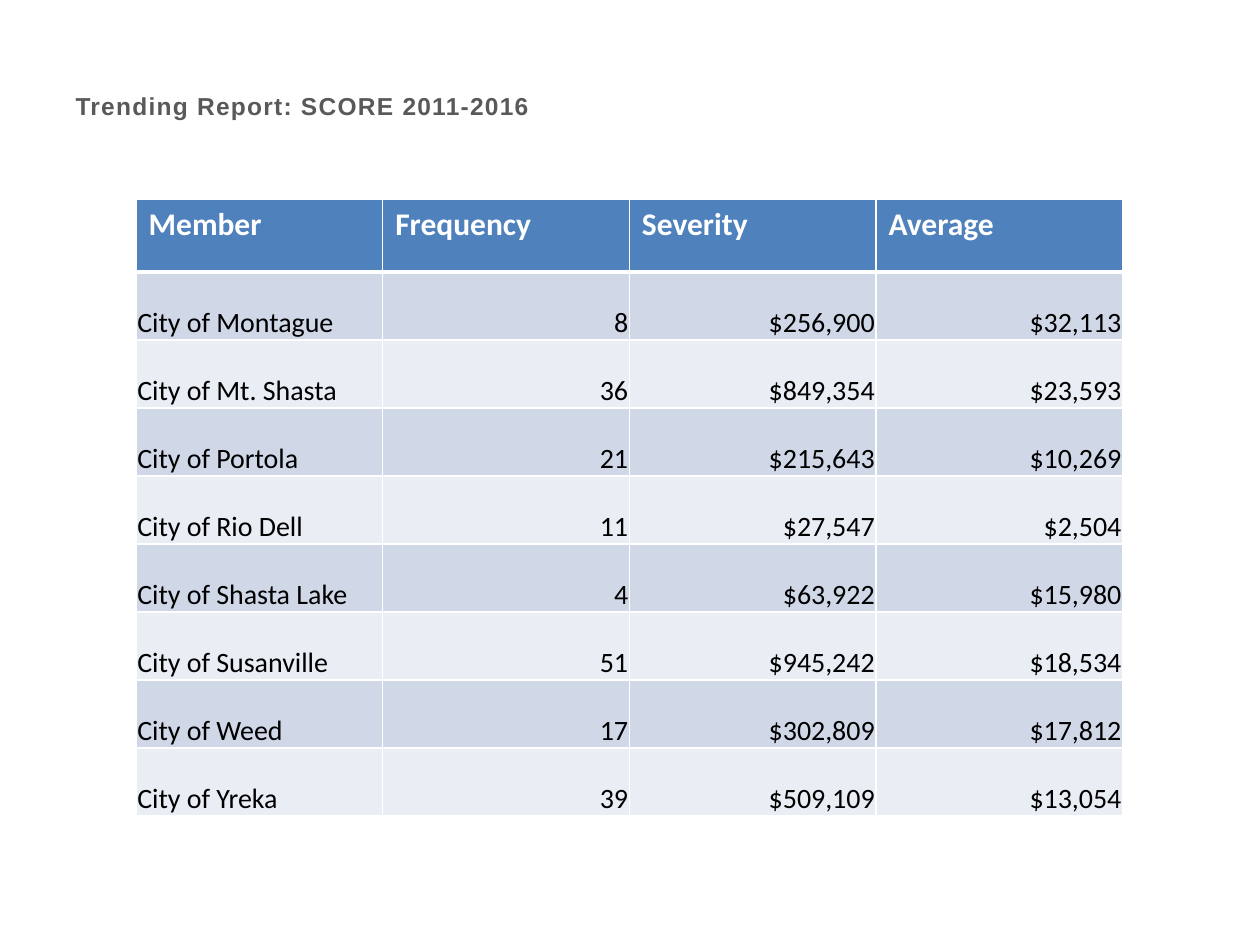
from typing import NamedTuple

from lxml.etree import SubElement
from pptx import Presentation
from pptx.dml.color import RGBColor
from pptx.enum.text import MSO_ANCHOR as Anchor, PP_ALIGN as Align
from pptx.oxml.ns import qn
from pptx.util import Inches, Pt

WHITE = RGBColor(0xFF, 0xFF, 0xFF)
BLACK = RGBColor(0x00, 0x00, 0x00)
GRAY = RGBColor(0x59, 0x59, 0x59)
BLUE = RGBColor(0x4F, 0x81, 0xBD)
BAND_DARK = RGBColor(0xD0, 0xD8, 0xE8)
BAND_LIGHT = RGBColor(0xE9, 0xED, 0xF4)

HEADINGS = ("Member", "Frequency", "Severity", "Average")
TABLE_WIDTH = 7.83
HEADER_HEIGHT = 0.58
ROW_HEIGHT = 0.54


class MemberLosses(NamedTuple):
    member: str
    frequency: int
    severity: int
    average: int

    def labels(self) -> tuple[str, ...]:
        return (self.member, str(self.frequency),
                f"${self.severity:,}", f"${self.average:,}")


LOSSES = (
    MemberLosses("City of Montague", 8, 256900, 32113),
    MemberLosses("City of Mt. Shasta", 36, 849354, 23593),
    MemberLosses("City of Portola", 21, 215643, 10269),
    MemberLosses("City of Rio Dell", 11, 27547, 2504),
    MemberLosses("City of Shasta Lake", 4, 63922, 15980),
    MemberLosses("City of Susanville", 51, 945242, 18534),
    MemberLosses("City of Weed", 17, 302809, 17812),
    MemberLosses("City of Yreka", 39, 509109, 13054),
)


def write_text(frame, text: str, *, size: float, color: RGBColor,
               font: str = "Calibri", bold: bool = False,
               align: Align = Align.LEFT, spacing: float = 0) -> None:
    paragraph = frame.paragraphs[0]
    paragraph.alignment = align
    run = paragraph.add_run()
    run.text = text
    run.font.name = font
    run.font.size = Pt(size)
    run.font.bold = bold
    run.font.color.rgb = color
    if spacing:
        run.font._element.set("spc", str(round(spacing * 100)))


def style_cell(cell, fill: RGBColor, top: float = 1, bottom: float = 1) -> None:
    properties = cell._tc.get_or_add_tcPr()
    for side, width in (("L", 1), ("R", 1), ("T", top), ("B", bottom)):
        border = SubElement(properties, qn(f"a:ln{side}"), w=str(Pt(width)))
        border_fill = SubElement(border, qn("a:solidFill"))
        SubElement(border_fill, qn("a:srgbClr"), val=str(WHITE))
    cell.fill.solid()
    cell.fill.fore_color.rgb = fill


def draw_header(table) -> None:
    table.rows[0].height = Inches(HEADER_HEIGHT)
    for cell, heading in zip(table.rows[0].cells, HEADINGS):
        style_cell(cell, BLUE, bottom=3)
        write_text(cell.text_frame, heading, size=18, color=WHITE, bold=True)


def draw_losses(table, index: int, losses: MemberLosses) -> None:
    row = table.rows[index]
    row.height = Inches(ROW_HEIGHT)
    for column, (cell, label) in enumerate(zip(row.cells, losses.labels())):
        style_cell(cell, BAND_DARK if index % 2 else BAND_LIGHT,
                   top=3 if index == 1 else 1)
        cell.margin_left = cell.margin_right = cell.margin_top = Inches(0.01)
        cell.margin_bottom = 0
        cell.vertical_anchor = Anchor.BOTTOM
        write_text(cell.text_frame, label, size=16, color=BLACK,
                   align=Align.RIGHT if column else Align.LEFT)


def main() -> None:
    deck = Presentation()
    deck.slide_width, deck.slide_height = Inches(10), Inches(7.5)
    slide = deck.slides.add_slide(deck.slide_layouts[5])

    title = slide.shapes.title
    title.left, title.top = Inches(0.5), Inches(0.67)
    title.width, title.height = Inches(9), Inches(0.37)
    title.text_frame.vertical_anchor = Anchor.TOP
    write_text(title.text_frame, "Trending Report: SCORE 2011-2016", size=14,
               color=GRAY, font="Arial", bold=True, spacing=0.7)

    table = slide.shapes.add_table(
        len(LOSSES) + 1, len(HEADINGS), Inches(1.08), Inches(1.58),
        Inches(TABLE_WIDTH), Inches(HEADER_HEIGHT + ROW_HEIGHT * len(LOSSES))).table
    draw_header(table)
    for index, losses in enumerate(LOSSES, start=1):
        draw_losses(table, index, losses)

    deck.save("out.pptx")


if __name__ == "__main__":
    main()
